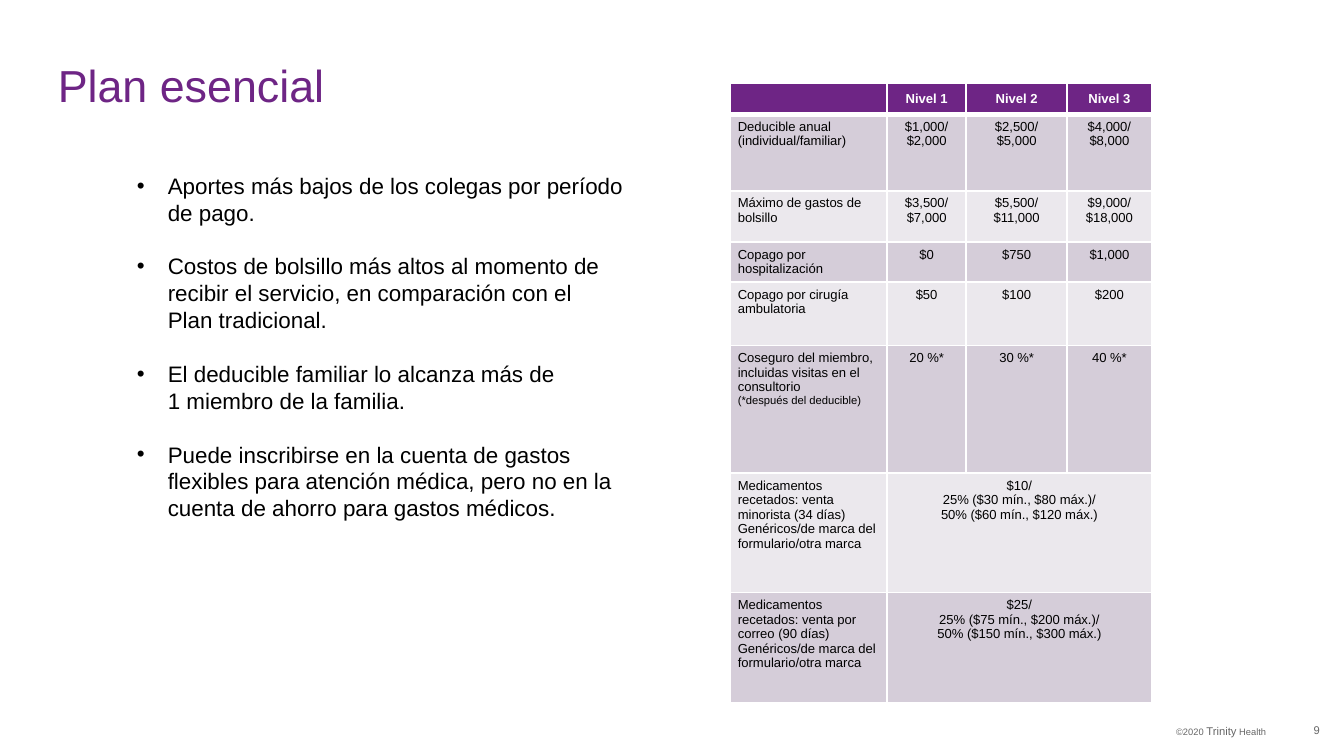
import pptx
import pptx.util
import pptx.dml.color
import pptx.enum.text
import pptx.oxml.ns
import lxml.etree

Inches = pptx.util.Inches
Pt = pptx.util.Pt
RGBColor = pptx.dml.color.RGBColor
Align = pptx.enum.text.PP_ALIGN
Anchor = pptx.enum.text.MSO_ANCHOR
qn = pptx.oxml.ns.qn

PURPLE = RGBColor(0x6E, 0x25, 0x85)
DARK_BAND = RGBColor(0xD5, 0xCD, 0xD9)
LIGHT_BAND = RGBColor(0xEB, 0xE8, 0xED)
WHITE = RGBColor(0xFF, 0xFF, 0xFF)
BLACK = RGBColor(0, 0, 0)
GREY = RGBColor(0x66, 0x66, 0x66)

COLUMN_WIDTHS = [1.17, 0.59, 0.75, 0.63]
ROW_HEIGHTS = [0.23, 0.57, 0.38, 0.3, 0.47, 0.95, 0.89, 0.82]
AFTER_DEDUCTIBLE = "(*después del deducible)"
ROWS = [
    ["", "Nivel\u00a01", "Nivel\u00a02", "Nivel\u00a03"],
    ["Deducible anual (individual/familiar)", "$1,000/\n$2,000", "$2,500/\v$5,000", "$4,000/\v$8,000"],
    ["Máximo de gastos de bolsillo", "$3,500/\v$7,000", "$5,500/\v$11,000", "$9,000/\v$18,000"],
    ["Copago por hospitalización", "$0", "$750", "$1,000"],
    ["Copago por cirugía ambulatoria", "$50", "$100", "$200"],
    ["Coseguro del miembro, incluidas visitas en el consultorio\n" + AFTER_DEDUCTIBLE,
     "20\u00a0%*", "30\u00a0%*", "40\u00a0%*"],
    ["Medicamentos recetados: venta minorista (34\u00a0días)\nGenéricos/de marca del formulario/otra marca",
     "$10/\n25% ($30\u00a0mín., $80\u00a0máx.)/\n50% ($60\u00a0mín., $120\u00a0máx.)"],
    ["Medicamentos recetados: venta por correo (90\u00a0días)\nGenéricos/de marca del formulario/otra marca",
     "$25/\n25% ($75\u00a0mín., $200\u00a0máx.)/\n50% ($150\u00a0mín., $300\u00a0máx.)"],
]
BULLETS = [
    "Aportes más bajos de los colegas por período de pago.",
    "Costos de bolsillo más altos al momento de recibir el servicio, en comparación con el \vPlan tradicional.",
    "El deducible familiar lo alcanza más de 1\u00a0miembro de la familia.",
    "Puede inscribirse en la cuenta de gastos flexibles para atención médica, "
    "pero no en la cuenta de ahorro para gastos médicos.",
]


def set_font(paragraph, size, color, bold=False):
    font = paragraph.font
    font.name = "Arial"
    font.size = Pt(size)
    font.bold = bold
    font.color.rgb = color


def add_text_box(slide, left, top, width, height):
    shape = slide.shapes.add_textbox(Inches(left), Inches(top), Inches(width), Inches(height))
    shape.text_frame.word_wrap = True
    return shape.text_frame


def add_title(slide, text):
    shape = slide.shapes.title
    shape.left, shape.top = Inches(0.43), Inches(0.38)
    shape.width, shape.height = Inches(9), Inches(0.55)
    frame = shape.text_frame
    frame.text = text
    frame.margin_left = frame.margin_right = frame.margin_top = frame.margin_bottom = 0
    frame.vertical_anchor = Anchor.MIDDLE
    paragraph = frame.paragraphs[0]
    paragraph.alignment = Align.LEFT
    paragraph.line_spacing = 0.9
    set_font(paragraph, 24, PURPLE)


def add_bullets(slide, texts):
    frame = add_text_box(slide, 0.92, 1.23, 4.01, 2.73)
    frame.text = "\n".join(texts)
    for index, paragraph in enumerate(frame.paragraphs):
        properties = paragraph._p.get_or_add_pPr()
        properties.set("marL", str(Inches(0.23)))
        properties.set("indent", str(Inches(-0.23)))
        if index:
            paragraph.space_before = Pt(14.4)
        lxml.etree.SubElement(properties, qn("a:buFont"), typeface="Arial")
        lxml.etree.SubElement(properties, qn("a:buChar"), char="•")
        set_font(paragraph, 12, BLACK)


def set_borders(cell, top, bottom):
    properties = cell._tc.get_or_add_tcPr()
    widths = {"a:lnL": 1, "a:lnR": 1, "a:lnT": top, "a:lnB": bottom}
    for index, (tag, width) in enumerate(widths.items()):
        line = lxml.etree.Element(qn(tag), w=str(Pt(width)))
        fill = lxml.etree.SubElement(line, qn("a:solidFill"))
        lxml.etree.SubElement(fill, qn("a:srgbClr"), val=str(WHITE))
        properties.insert(index, line)


def format_cell(cell, row, column):
    header = row == 0
    cell.margin_left = cell.margin_right = Inches(0.06)
    cell.margin_top = cell.margin_bottom = Inches(0.04)
    cell.vertical_anchor = Anchor.MIDDLE if header else Anchor.TOP
    cell.fill.solid()
    cell.fill.fore_color.rgb = PURPLE if header else DARK_BAND if row % 2 else LIGHT_BAND
    set_borders(cell, 3 if row == 1 else 1, 3 if header else 1)
    for paragraph in cell.text_frame.paragraphs:
        paragraph.alignment = Align.CENTER if column else Align.LEFT
        size = 6 if paragraph.text == AFTER_DEDUCTIBLE else 7
        set_font(paragraph, size, WHITE if header else BLACK, header)
        if not paragraph.text:
            lxml.etree.SubElement(paragraph._p, qn("a:endParaRPr"), sz="700")


def add_plan_table(slide):
    table = slide.shapes.add_table(
        len(ROWS), len(COLUMN_WIDTHS), Inches(5.43), Inches(0.62),
        Inches(sum(COLUMN_WIDTHS)), Inches(sum(ROW_HEIGHTS))).table
    for column, width in zip(table.columns, COLUMN_WIDTHS):
        column.width = Inches(width)
    for row, height in zip(table.rows, ROW_HEIGHTS):
        row.height = Inches(height)
    for row, texts in enumerate(ROWS):
        if len(texts) == 2:
            table.cell(row, 1).merge(table.cell(row, 3))
        for column, text in enumerate(texts):
            table.cell(row, column).text = text
        for column in range(len(COLUMN_WIDTHS)):
            format_cell(table.cell(row, column), row, column)


def add_footer_text(frame, runs):
    paragraph = frame.paragraphs[0]
    paragraph.alignment = Align.RIGHT
    set_font(paragraph, 6, GREY)
    for text, size in runs:
        run = paragraph.add_run()
        run.text = text
        run.font.size = Pt(size)


def add_footer(slide):
    number = add_text_box(slide, 9.38, 5.28, 0.44, 0.3)
    number.margin_right = 0
    number.vertical_anchor = Anchor.MIDDLE
    add_footer_text(number, [("9", 6)])
    copyright_line = add_text_box(slide, 5.33, 5.34, 4.19, 0.2)
    add_footer_text(copyright_line, [("©2020 ", 5), ("Trinity", 6), (" Health", 5)])


def main():
    presentation = pptx.Presentation()
    presentation.slide_width = Inches(10)
    presentation.slide_height = Inches(10) * 9 // 16
    slide = presentation.slides.add_slide(presentation.slide_layouts[5])
    add_plan_table(slide)
    add_footer(slide)
    add_title(slide, "Plan esencial")
    add_bullets(slide, BULLETS)
    presentation.save("out.pptx")


if __name__ == "__main__":
    main()
